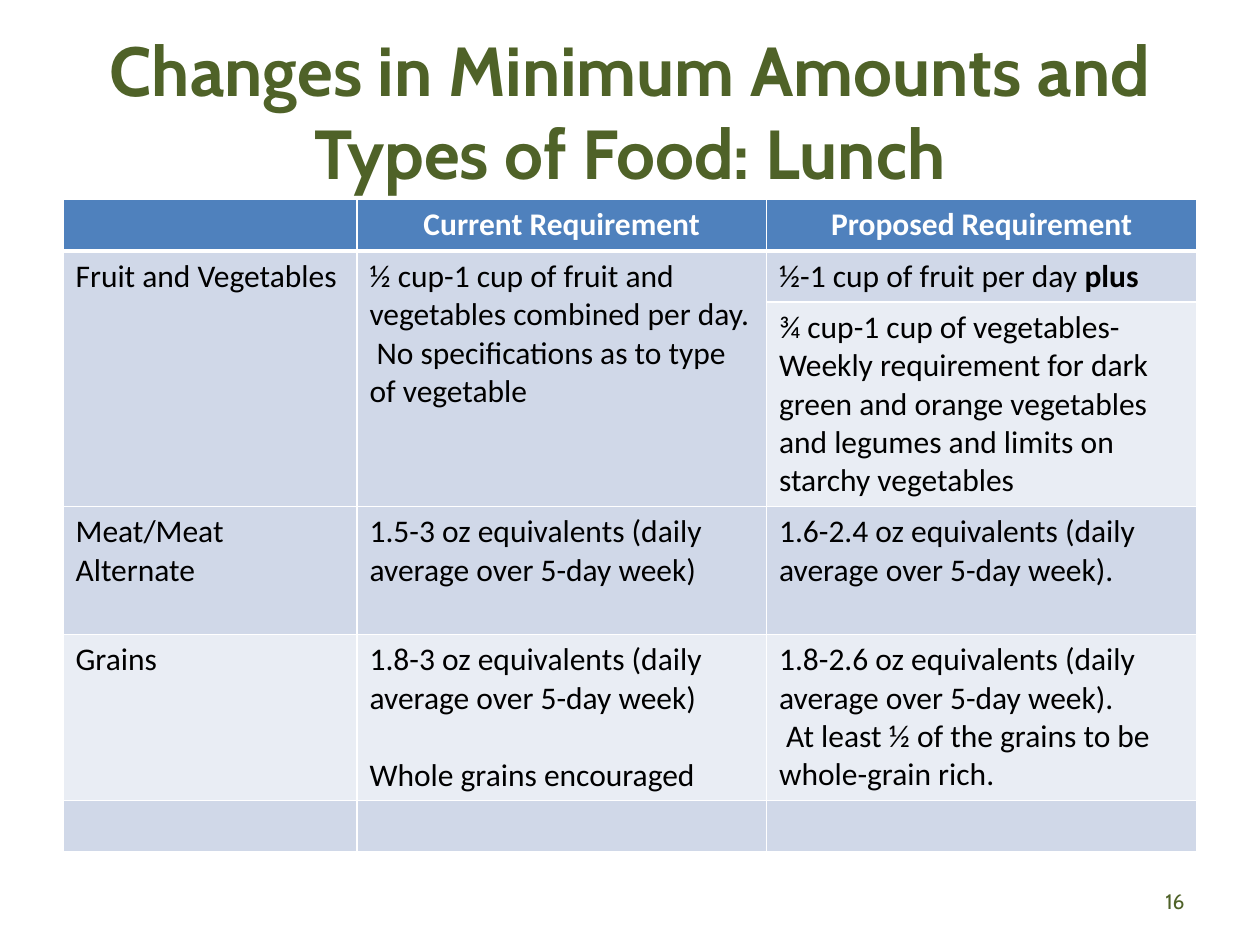
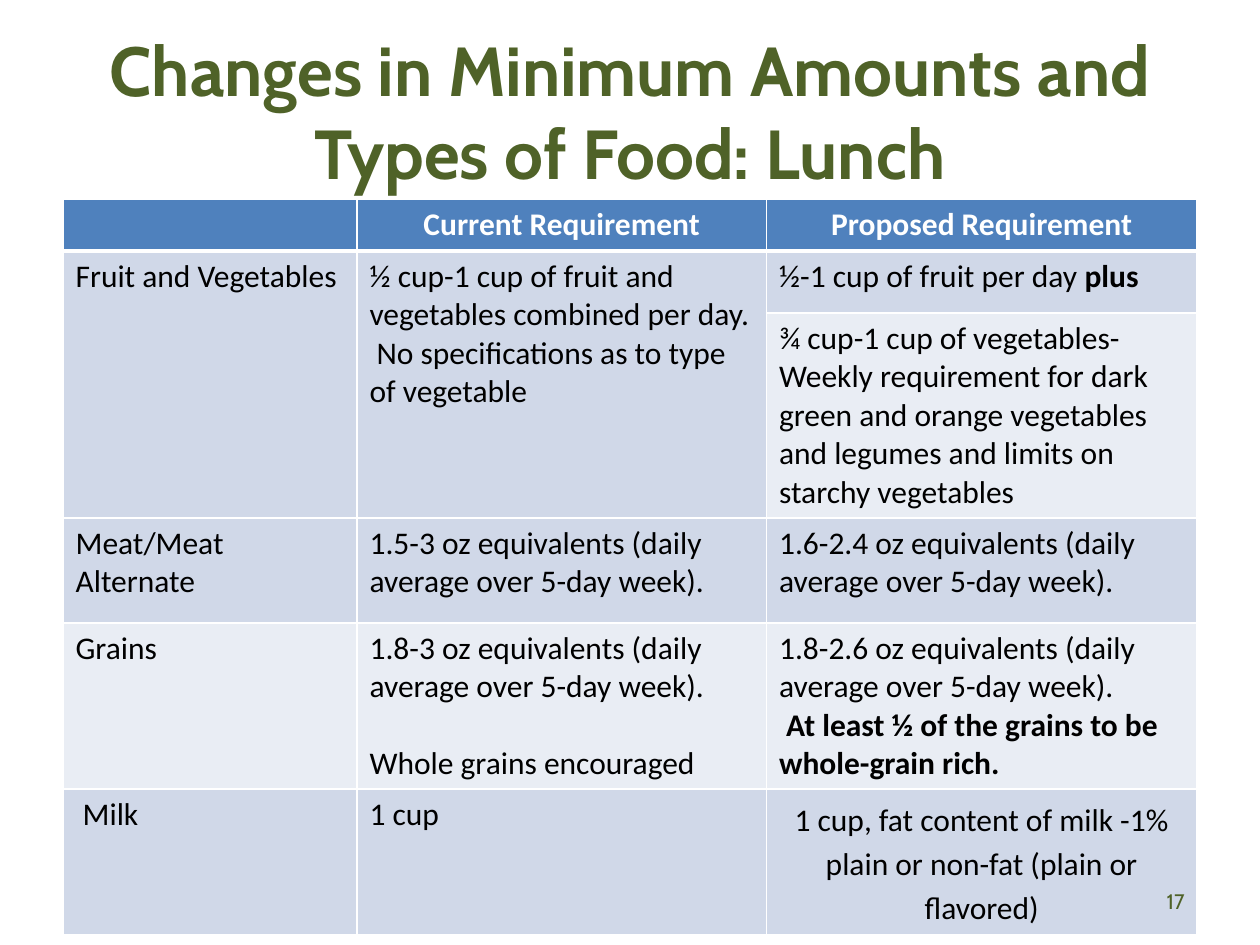
from dataclasses import dataclass
from typing import Optional

import pptx
import pptx.dml.color
import pptx.enum.text
import pptx.oxml
import pptx.oxml.ns
import pptx.util

Pt = pptx.util.Pt
RGBColor = pptx.dml.color.RGBColor
Align = pptx.enum.text.PP_ALIGN
Anchor = pptx.enum.text.MSO_ANCHOR

GREEN = RGBColor(0x4F, 0x62, 0x28)
BLUE = RGBColor(0x4F, 0x81, 0xBD)
DARK_BAND = RGBColor(0xD0, 0xD8, 0xE8)
LIGHT_BAND = RGBColor(0xE9, 0xED, 0xF4)
WHITE = RGBColor(0xFF, 0xFF, 0xFF)
BLACK = RGBColor(0, 0, 0)
HEADING_FONT = "Cabin"
BODY_FONT = "Calibri"
BODY_SIZE = 18
BLANK_LAYOUT = 6
TITLE = "Changes in Minimum Amounts and Types of Food: Lunch"
COLUMN_WIDTHS = (168, 234, 246)
ROW_FILLS = (BLUE, DARK_BAND, LIGHT_BAND, DARK_BAND, LIGHT_BAND, DARK_BAND)


@dataclass(frozen=True)
class Line:
    text: str
    bold_text: str = ""
    centered: bool = False
    space_before: float = 0


@dataclass(frozen=True)
class Label:
    left: float
    top: float
    width: float
    height: float
    size: float
    align: Align
    bold: bool = False


Cell = tuple[Line, ...]


@dataclass(frozen=True)
class LunchSlide:
    number: int
    row_heights: tuple[float, ...]
    meat_current: str
    grains_current: str
    whole_grain_rule: Line
    last_row: tuple[Cell, Cell, Cell]


TITLE_LABEL = Label(36, 18, 648, 90, 39.6, Align.CENTER, bold=True)
NUMBER_LABEL = Label(516, 500.5, 168, 29, 12, Align.RIGHT)

LUNCH_SLIDES = (
    LunchSlide(
        16,
        (29.5, 29, 117, 73, 95, 29),
        "1.5-3 oz equivalents (daily average over 5-day week)",
        "1.8-3 oz equivalents (daily average over 5-day week)",
        Line(" At least ½ of the grains to be whole-grain rich."),
        ((), (), ()),
    ),
    LunchSlide(
        17,
        (29.5, 35.5, 117, 60, 95, 83),
        "1.5-3 oz equivalents (daily average over 5-day week).",
        "1.8-3 oz equivalents (daily average over 5-day week).",
        Line(" ", bold_text="At least ½ of the grains to be whole-grain rich."),
        (
            (Line(" Milk"),),
            (Line("1 cup"),),
            (Line("1 cup, fat content of milk -1% plain or non-fat (plain or flavored)", centered=True),),
        ),
    ),
)


def requirement_rows(lunch: LunchSlide) -> list[tuple[Cell, Cell, Cell]]:
    return [
        (
            (),
            (Line("", "Current Requirement", centered=True),),
            (Line("", "Proposed Requirement", centered=True),),
        ),
        (
            (Line("Fruit and Vegetables"),),
            (
                Line("½ cup-1 cup of fruit and vegetables combined per day."),
                Line(" No specifications as to type of vegetable"),
            ),
            (Line("½-1 cup of fruit per day ", "plus "),),
        ),
        (
            (),
            (),
            (
                Line("¾ cup-1 cup of vegetables-"),
                Line(
                    "Weekly requirement for dark green and orange vegetables "
                    "and legumes and limits on starchy vegetables"
                ),
            ),
        ),
        (
            (Line("Meat/Meat Alternate"),),
            (Line(lunch.meat_current),),
            (Line("1.6-2.4 oz equivalents (daily average over 5-day week)."),),
        ),
        (
            (Line("Grains"),),
            (Line(lunch.grains_current), Line("Whole grains encouraged", space_before=22)),
            (
                Line("1.8-2.6 oz equivalents (daily average over 5-day week)."),
                lunch.whole_grain_rule,
            ),
        ),
        lunch.last_row,
    ]


def format_run(run, font_name: str, size: float, color: RGBColor, bold: bool) -> None:
    run.font.name = font_name
    run.font.size = Pt(size)
    run.font.color.rgb = color
    run.font.bold = bold


def add_label(slide, label: Label, text: str) -> None:
    shape = slide.shapes.add_textbox(Pt(label.left), Pt(label.top), Pt(label.width), Pt(label.height))
    text_frame = shape.text_frame
    text_frame.word_wrap = True
    text_frame.vertical_anchor = Anchor.MIDDLE
    text_frame.text = text
    paragraph = text_frame.paragraphs[0]
    paragraph.alignment = label.align
    format_run(paragraph.runs[0], HEADING_FONT, label.size, GREEN, label.bold)


def write_cell(cell, lines: Cell, color: RGBColor) -> None:
    text_frame = cell.text_frame
    for index, line in enumerate(lines):
        paragraph = text_frame.add_paragraph() if index else text_frame.paragraphs[0]
        if line.centered:
            paragraph.alignment = Align.CENTER
            paragraph.line_spacing = 1.15
        if line.space_before:
            paragraph.space_before = Pt(line.space_before)
        for text, bold in ((line.text, False), (line.bold_text, True)):
            if text:
                run = paragraph.add_run()
                run.text = text
                format_run(run, BODY_FONT, BODY_SIZE, color, bold)


def set_borders(cell, top: float, bottom: float) -> None:
    properties = cell._tc.get_or_add_tcPr()
    widths = {"lnL": 1, "lnR": 1, "lnT": top, "lnB": bottom}
    for position, (side, width) in enumerate(widths.items()):
        border = pptx.oxml.parse_xml(
            f'<a:{side} {pptx.oxml.ns.nsdecls("a")} w="{Pt(width)}">'
            f'<a:solidFill><a:srgbClr val="{WHITE}"/></a:solidFill></a:{side}>'
        )
        properties.insert(position, border)


def add_requirement_table(slide, lunch: LunchSlide) -> None:
    rows = requirement_rows(lunch)
    frame = slide.shapes.add_table(
        len(rows), len(COLUMN_WIDTHS), Pt(36), Pt(114), Pt(sum(COLUMN_WIDTHS)), Pt(sum(lunch.row_heights))
    )
    table = frame.table
    for column, width in zip(table.columns, COLUMN_WIDTHS):
        column.width = Pt(width)
    for row_index, cells in enumerate(rows):
        header = row_index == 0
        table.rows[row_index].height = Pt(lunch.row_heights[row_index])
        for column_index, lines in enumerate(cells):
            cell = table.cell(row_index, column_index)
            cell.fill.solid()
            cell.fill.fore_color.rgb = ROW_FILLS[row_index]
            set_borders(cell, 3 if row_index == 1 else 1, 3 if header else 1)
            if header:
                cell.margin_left = cell.margin_right = Pt(5)
                cell.margin_top = cell.margin_bottom = Pt(0)
            write_cell(cell, lines, WHITE if header else BLACK)
    for column_index in (0, 1):
        table.cell(1, column_index).merge(table.cell(2, column_index))


def main() -> None:
    presentation = pptx.Presentation()
    presentation.slide_width = Pt(720)
    presentation.slide_height = Pt(540)
    for lunch in LUNCH_SLIDES:
        slide = presentation.slides.add_slide(presentation.slide_layouts[BLANK_LAYOUT])
        add_label(slide, TITLE_LABEL, TITLE)
        add_requirement_table(slide, lunch)
        add_label(slide, NUMBER_LABEL, str(lunch.number))
    presentation.save("out.pptx")


if __name__ == "__main__":
    main()
